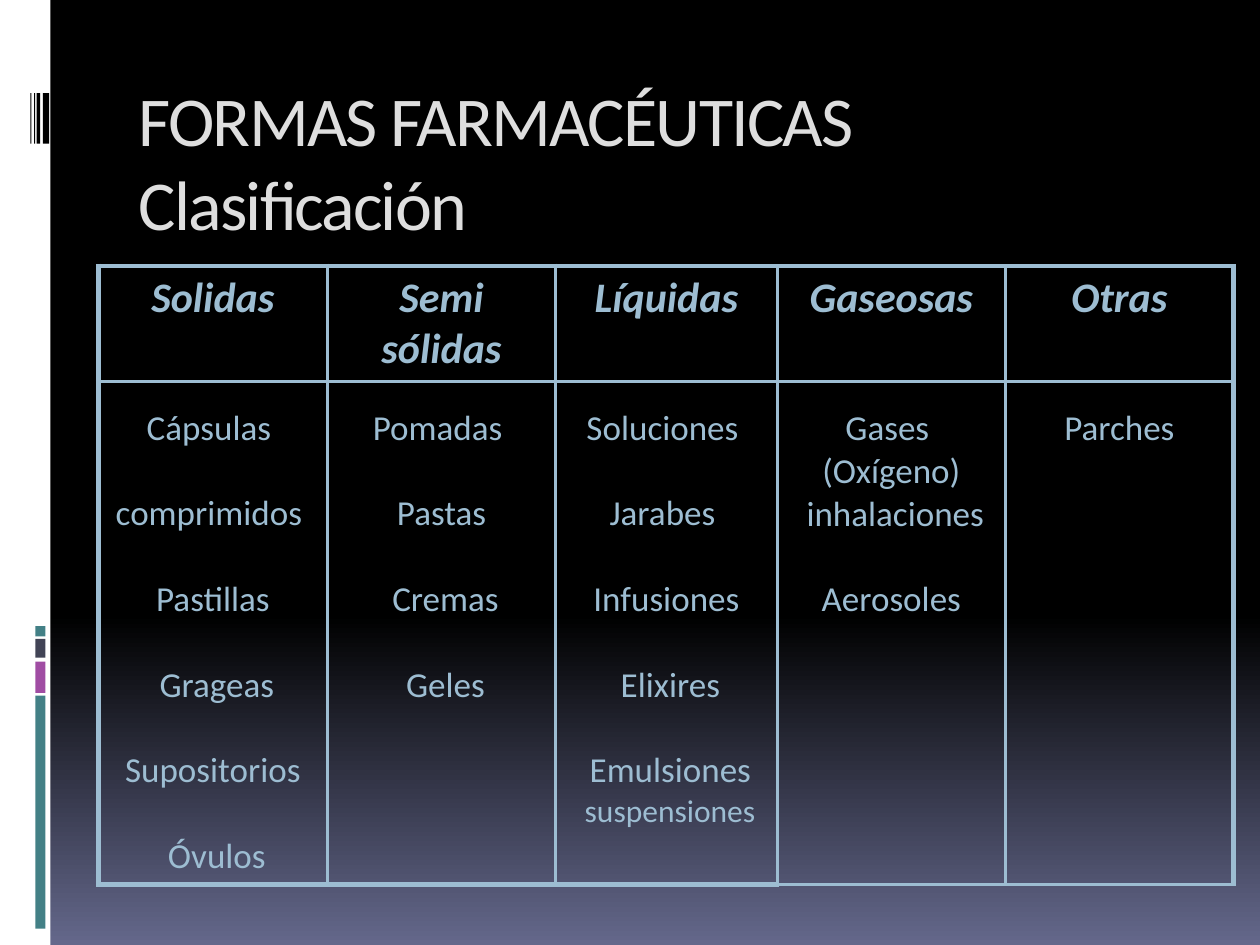
import copy

import pptx
import pptx.dml.color
import pptx.enum.shapes
import pptx.enum.text
import pptx.oxml
import pptx.oxml.ns
import pptx.util

Inches = pptx.util.Inches
Pt = pptx.util.Pt
RGB = pptx.dml.color.RGBColor.from_string
qn = pptx.oxml.ns.qn

COLORS = {
    "black": "000000", "white": "FFFFFF", "dusk": "64688B", "teal": "438086",
    "purple": "A04DA3", "slate": "424456", "title": "DEDEDE", "table": "9DBDD2",
}


def format_run(r, color, **values):
    r.font.name = "Calibri"
    r.font.color.rgb = RGB(COLORS[color])
    for name, value in values.items():
        setattr(r.font, name, value)


def set_border(cell, side, width):
    ln = pptx.oxml.parse_xml(
        f'<a:{side} xmlns:a="http://schemas.openxmlformats.org/drawingml/2006/main" '
        f'w="{Pt(width)}"><a:solidFill><a:srgbClr val="{COLORS["table"]}"/>'
        f'</a:solidFill></a:{side}>')
    cell._tc.get_or_add_tcPr().append(ln)


prs = pptx.Presentation()
prs.slide_width = Inches(10)
prs.slide_height = Inches(7.5)
s = prs.slides.add_slide(prs.slide_layouts[5])

fill = s.background.fill
fill.gradient()
fill.gradient_angle = 270
gs_list = s._element.find(".//" + qn("a:gsLst"))
gs_list.append(copy.deepcopy(gs_list[-1]))
stops = [(0, "black"), (0.65, "black"), (1, "dusk")]
for stop, (position, color) in zip(fill.gradient_stops, stops):
    stop.position = position
    stop.color.rgb = RGB(COLORS[color])

bars = [
    (0, 0, 0.4, 7.5, "white"),
    (0.28, 5.52, 0.08, 1.85, "teal"),
    (0.28, 5.25, 0.08, 0.25, "purple"),
    (0.28, 5.07, 0.08, 0.15, "slate"),
    (0.28, 4.97, 0.08, 0.08, "teal"),
    (0.34, 0.74, 0.05, 0.4, "black"),
    (0.29, 0.74, 0.03, 0.4, "black"),
    (0.27, 0.74, 0.01, 0.4, "black"),
    (0.24, 0.74, 0.01, 0.4, "black"),
]
for *box, color in bars:
    sp = s.shapes.add_shape(pptx.enum.shapes.MSO_SHAPE.RECTANGLE, *map(Inches, box))
    sp.shadow.inherit = False
    sp.fill.solid()
    sp.fill.fore_color.rgb = RGB(COLORS[color])
    sp.line.fill.background()

title = s.shapes.title
title.left, title.top, title.width, title.height = map(Inches, (1, 0.56, 8.5, 1))
tf = title.text_frame
tf.text = "FORMAS FARMACÉUTICAS\vClasificación"
tf.word_wrap = True
tf.auto_size = pptx.enum.text.MSO_AUTO_SIZE.NONE
tf.vertical_anchor = pptx.enum.text.MSO_ANCHOR.TOP
p = tf.paragraphs[0]
p.alignment = pptx.enum.text.PP_ALIGN.LEFT
for r in p.runs:
    format_run(r, "title", size=Pt(40))
    r._r.get_or_add_rPr().set("spc", "-100")
p._p.find(qn("a:br")).insert(0, copy.deepcopy(p.runs[0]._r.rPr))

columns = [
    (1.82, ["Solidas"],
     [["Cápsulas "], ["comprimidos "], ["Pastillas"], [" Grageas"],
      ["Supositorios"], [" Óvulos"]]),
    (1.81, ["Semi", "sólidas"],
     [["Pomadas "], ["Pastas"], [" Cremas"], [" Geles"]]),
    (1.76, ["Líquidas"],
     [["Soluciones "], ["Jarabes "], ["Infusiones"], [" Elixires"],
      [" Emulsiones", " suspensiones"]]),
    (1.81, ["Gaseosas"],
     [["Gases ", "(Oxígeno)", " inhalaciones"], ["Aerosoles"]]),
    (1.81, ["Otras"], [["Parches"]]),
]
table = s.shapes.add_table(2, len(columns), Inches(0.78), Inches(2.11),
                           Inches(9.01), Inches(4.91)).table
table.first_row = False
table.horz_banding = False
for row, height in zip(table.rows, (0.92, 3.99)):
    row.height = Inches(height)

for col, (width, heading, groups) in enumerate(columns):
    table.columns[col].width = Inches(width)
    for row, content in enumerate(([heading], groups)):
        cell = table.cell(row, col)
        cell.margin_top = Inches((0.05, 0.2)[row])
        thick_sides = {
            "lnL": col == 0,
            "lnR": col == len(columns) - 1,
            "lnT": row == 0 and col < 3,
            "lnB": row == 1 and col < 3,
        }
        for side, thick in thick_sides.items():
            set_border(cell, side, 3 if thick else 2.25)
        cell.fill.background()
        tf = cell.text_frame
        tf.text = "\n".join(line for group in content for line in group)
        starts = [i == 0 for group in content for i in range(len(group))]
        for i, (p, starts_group) in enumerate(zip(tf.paragraphs, starts)):
            p.alignment = pptx.enum.text.PP_ALIGN.CENTER
            p.space_before = Pt(24.4 if i and starts_group else 0)
            r = p.runs[0]
            size = 24 if row == 0 else 18 if r.text == " suspensiones" else 20
            format_run(r, "table", size=Pt(size), bold=row == 0, italic=row == 0)

prs.save("out.pptx")
